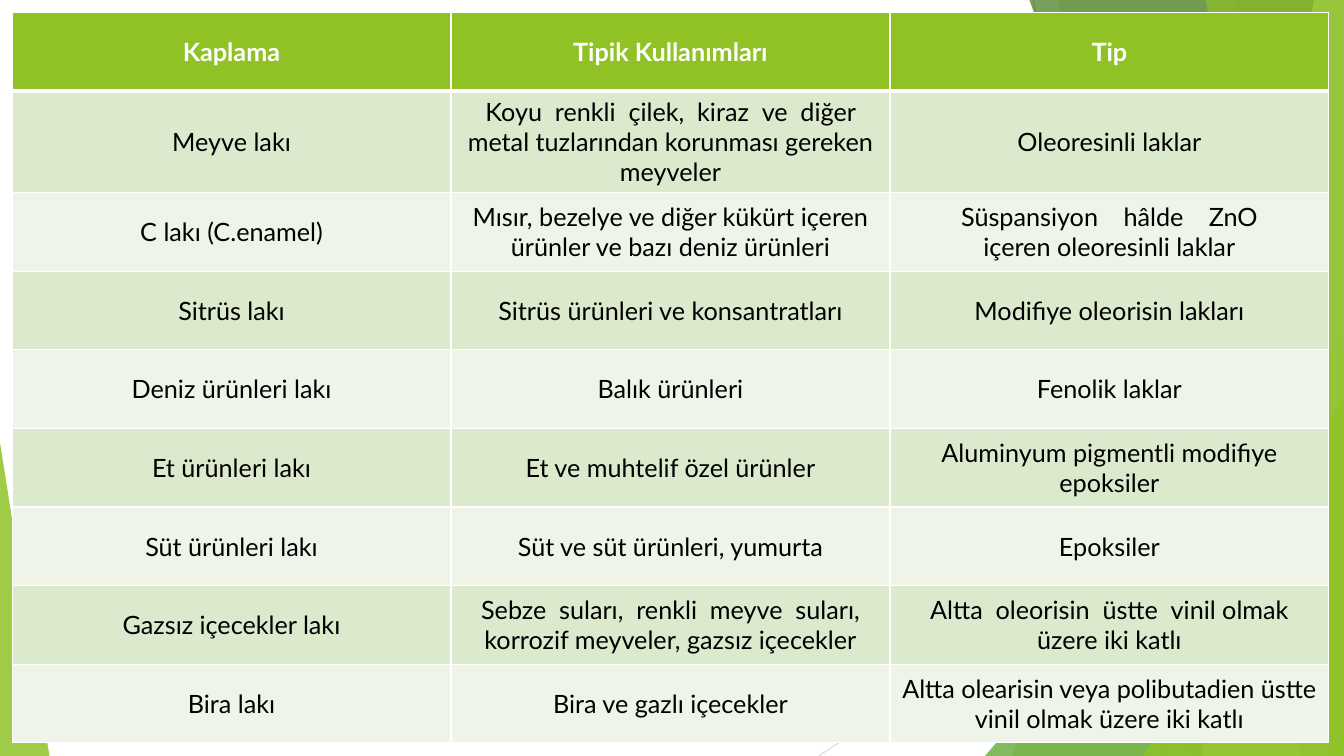
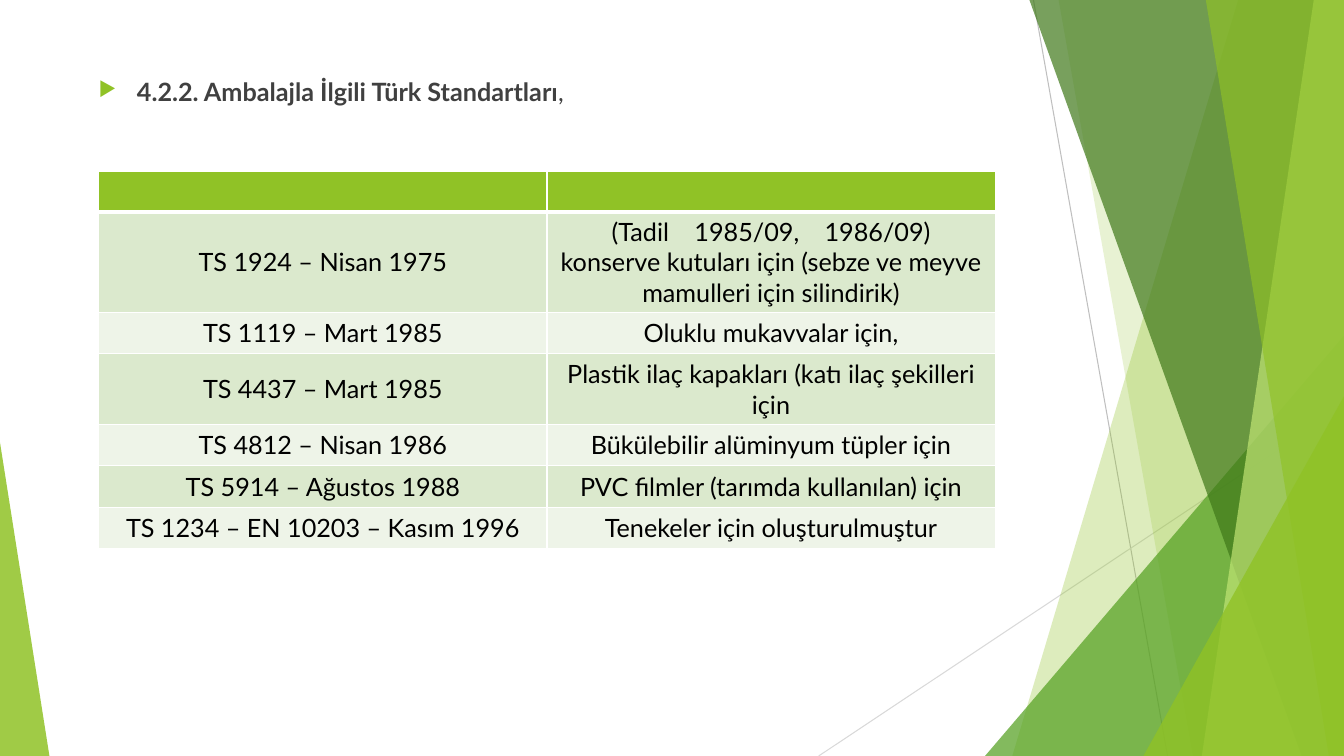
"""Build two slides on can coatings and Turkish packaging standards."""
from dataclasses import dataclass
from typing import NamedTuple

from lxml.etree import SubElement
from pptx import Presentation
from pptx.dml.color import RGBColor
from pptx.enum.shapes import MSO_CONNECTOR, MSO_SHAPE
from pptx.enum.text import MSO_ANCHOR, PP_ALIGN
from pptx.oxml.ns import qn
from pptx.util import Inches, Pt

WIDE, HIGH = 13.33, 7.5


@dataclass(frozen=True)
class Theme:
    lime: str = "90C226"
    green: str = "54A021"
    dark: str = "3F7819"
    pale: str = "C0E474"
    odd: str = "DBE9CD"
    even: str = "EEF4E8"
    white: str = "FFFFFF"
    black: str = "000000"
    grey: str = "404040"
    steel: str = "BFBFBF"
    mist: str = "D9D9D9"
    font: str = "Lato"
    size: float = 18
    rule: float = 1
    thick: float = 3
    loose: float = 4.5
    broad: float = 13.5


LOOK = Theme()


class Line(NamedTuple):
    start: tuple[float, float]
    end: tuple[float, float]
    tint: str


class Band(NamedTuple):
    top: float
    foot: float
    tint: str
    alpha: int


class Wedge(NamedTuple):
    left: float
    top: float
    width: float
    peak: float
    tint: str
    alpha: int


class Span(NamedTuple):
    text: str
    gap: float = 0
    ends: bool = False


class Grid(NamedTuple):
    left: float
    top: float
    width: float
    rows: list[float]
    cells: list[tuple]


LINES = [
    Line((10.25, 0), (11.58, HIGH), LOOK.steel),
    Line((WIDE, 4.03), (8.12, HIGH), LOOK.mist),
]
DECOR = [
    Band(12.28, 10.04, LOOK.lime, 30),
    Band(10.5, 11.83, LOOK.lime, 20),
    Wedge(9.77, 3.33, 3.56, 1, LOOK.green, 72),
    Band(10.21, 12.91, LOOK.dark, 70),
    Band(13.03, 11.92, LOOK.pale, 70),
    Band(11.96, 13.18, LOOK.lime, 65),
    Wedge(11.34, 3.93, 1.99, 1, LOOK.lime, 80),
    Wedge(0, 4.39, 0.49, 0, LOOK.lime, 85),
]

COATS = Grid(0.12, 0.12, 13.06, [0.78, 1.01] + [0.78] * 7, [
    ("Kaplama", "Tipik Kullanımları", "Tip"),
    ("Meyve lakı",
     (Span("Koyu renkli çilek, kiraz ve diğer", LOOK.loose),
      Span(" metal tuzlarından korunması gereken meyveler")),
     "Oleoresinli laklar"),
    ("C lakı (C.enamel)",
     "Mısır, bezelye ve diğer kükürt içeren ürünler ve bazı deniz ürünleri",
     (Span("Süspansiyon hâlde ZnO", LOOK.broad, True),
      Span("içeren oleoresinli laklar"))),
    ("Sitrüs lakı", "Sitrüs ürünleri ve konsantratları",
     "Modifiye oleorisin lakları"),
    ("Deniz ürünleri lakı", "Balık ürünleri", "Fenolik laklar"),
    ("Et ürünleri lakı", "Et ve muhtelif özel ürünler",
     "Aluminyum pigmentli modifiye epoksiler"),
    ("Süt ürünleri lakı", "Süt ve süt ürünleri, yumurta", "Epoksiler"),
    ("Gazsız içecekler lakı",
     (Span("Sebze suları, renkli meyve suları,", LOOK.loose, True),
      Span("korrozif meyveler, gazsız içecekler")),
     (Span("Altta oleorisin üstte vinil", LOOK.loose),
      Span(" olmak üzere iki katlı"))),
    ("Bira lakı", "Bira ve gazlı içecekler",
     "Altta olearisin veya polibutadien üstte vinil olmak üzere iki katlı"),
])

NORMS = Grid(0.98, 1.7, 8.89, [0.4, 1, 0.41, 0.7, 0.41, 0.41, 0.41], [
    ("", ""),
    ("TS 1924 – Nisan 1975",
     (Span("(Tadil 1985/09, 1986/09)", LOOK.broad, True),
      Span("konserve kutuları için (sebze ve meyve mamulleri için silindirik)"))),
    ("TS 1119 – Mart 1985", "Oluklu mukavvalar için,"),
    ("TS 4437 – Mart 1985", "Plastik ilaç kapakları (katı ilaç şekilleri için"),
    ("TS 4812 – Nisan 1986", "Bükülebilir alüminyum tüpler için"),
    ("TS 5914 – Ağustos 1988", "PVC filmler (tarımda kullanılan) için"),
    ("TS 1234 – EN 10203 – Kasım 1996", "Tenekeler için oluşturulmuştur"),
])


def paint(shape, tint: str, alpha: int) -> None:
    """Fill a shape with a see-through colour and no outline."""
    shape.shadow.inherit = False
    shape.line.fill.background()
    shape.fill.solid()
    shape.fill.fore_color.rgb = RGBColor.from_string(tint)
    clr = shape.fill._xPr.find(".//" + qn("a:srgbClr"))
    SubElement(clr, qn("a:alpha"), val=str(alpha * 1000))


def draw_line(slide, line: Line) -> None:
    """Draw one thin straight line."""
    ends = [Inches(n) for n in line.start + line.end]
    link = slide.shapes.add_connector(MSO_CONNECTOR.STRAIGHT, *ends)
    link.line.color.rgb = RGBColor.from_string(line.tint)
    link.line.width = Pt(0.75)
    SubElement(link._element.spPr, qn("a:effectLst"))


def draw_band(slide, band: Band) -> None:
    """Draw a slanted band that runs to the right edge."""
    pen = slide.shapes.build_freeform(Inches(band.top), 0)
    spots = [(WIDE, 0), (WIDE, HIGH), (band.foot, HIGH)]
    pen.add_line_segments([(Inches(x), Inches(y)) for x, y in spots])
    paint(pen.convert_to_shape(), band.tint, band.alpha)


def draw_wedge(slide, wedge: Wedge) -> None:
    """Draw a triangle that stands on the bottom edge."""
    shape = slide.shapes.add_shape(
        MSO_SHAPE.ISOSCELES_TRIANGLE, Inches(wedge.left), Inches(wedge.top),
        Inches(wedge.width), Inches(HIGH - wedge.top))
    shape.adjustments[0] = wedge.peak
    paint(shape, wedge.tint, wedge.alpha)


def add_run(para, text: str, tint: str, bold: bool, gap: float = 0) -> None:
    """Add one styled run, with extra spacing in points."""
    run = para.add_run()
    run.text = text
    run.font.name = LOOK.font
    run.font.size = Pt(LOOK.size)
    run.font.bold = bold
    run.font.color.rgb = RGBColor.from_string(tint)
    if gap:
        run._r.get_or_add_rPr().set("spc", str(round(gap * 100)))


def add_span(para, span: Span, tint: str, bold: bool) -> None:
    """Add a span, widening its word gaps when asked."""
    if not span.gap:
        add_run(para, span.text, tint, bold)
        return
    for i, word in enumerate(span.text.split()):
        if i:
            add_run(para, " ", tint, bold, span.gap)
        add_run(para, word, tint, bold)


def fill_cell(cell, text: str | tuple[Span, ...], row: int) -> None:
    """Style one table cell and write its text."""
    head = row == 0
    props = cell._tc.get_or_add_tcPr()
    for side in ("lnL", "lnR", "lnT", "lnB"):
        heavy = (head and side == "lnB") or (row == 1 and side == "lnT")
        size = LOOK.thick if heavy else LOOK.rule
        edge = SubElement(props, qn(f"a:{side}"), w=str(Pt(size)))
        SubElement(SubElement(edge, qn("a:solidFill")), qn("a:srgbClr"),
                   val=LOOK.white)
    cell.fill.solid()
    tint = LOOK.lime if head else LOOK.odd if row % 2 else LOOK.even
    cell.fill.fore_color.rgb = RGBColor.from_string(tint)
    cell.vertical_anchor = MSO_ANCHOR.MIDDLE
    if not text:
        return
    spans = (Span(text),) if isinstance(text, str) else text
    frame = cell.text_frame
    para = frame.paragraphs[0]
    para.alignment = PP_ALIGN.CENTER
    for span in spans:
        add_span(para, span, LOOK.white if head else LOOK.black, head)
        if span.ends:
            para = frame.add_paragraph()
            para.alignment = PP_ALIGN.CENTER


def draw_grid(slide, grid: Grid) -> None:
    """Draw a table with equal columns."""
    cols = len(grid.cells[0])
    table = slide.shapes.add_table(
        len(grid.rows), cols, Inches(grid.left), Inches(grid.top),
        Inches(grid.width), Inches(sum(grid.rows))).table
    table.horz_banding = False
    for col in table.columns:
        col.width = Inches(grid.width / cols)
    for i, (high, texts) in enumerate(zip(grid.rows, grid.cells)):
        table.rows[i].height = Inches(high)
        for j, text in enumerate(texts):
            fill_cell(table.cell(i, j), text, i)


def draw_head(slide, text: str, tail: str) -> None:
    """Write the bulleted heading with its plain tail."""
    box = slide.shapes.add_textbox(
        Inches(0.88), Inches(0.71), Inches(9.4), Inches(0.6))
    box.text_frame.word_wrap = True
    para = box.text_frame.paragraphs[0]
    props = para._p.get_or_add_pPr()
    props.set("marL", str(Inches(0.38)))
    props.set("indent", str(Inches(-0.38)))
    SubElement(SubElement(props, qn("a:buClr")), qn("a:srgbClr"), val=LOOK.lime)
    SubElement(props, qn("a:buSzPct"), val="80000")
    SubElement(props, qn("a:buChar"), char="▶")
    add_run(para, text, LOOK.grey, True)
    add_run(para, tail, LOOK.grey, False)


def add_slide(deck):
    """Add a blank slide with the shared green decor."""
    slide = deck.slides.add_slide(deck.slide_layouts[6])
    for line in LINES:
        draw_line(slide, line)
    for part in DECOR:
        if isinstance(part, Band):
            draw_band(slide, part)
        else:
            draw_wedge(slide, part)
    return slide


def main() -> None:
    """Build and save the deck."""
    deck = Presentation()
    deck.slide_width, deck.slide_height = Inches(WIDE), Inches(HIGH)
    draw_grid(add_slide(deck), COATS)
    slide = add_slide(deck)
    draw_head(slide, "4.2.2. Ambalajla İlgili Türk Standartları", ",")
    draw_grid(slide, NORMS)
    deck.save("out.pptx")


if __name__ == "__main__":
    main()
